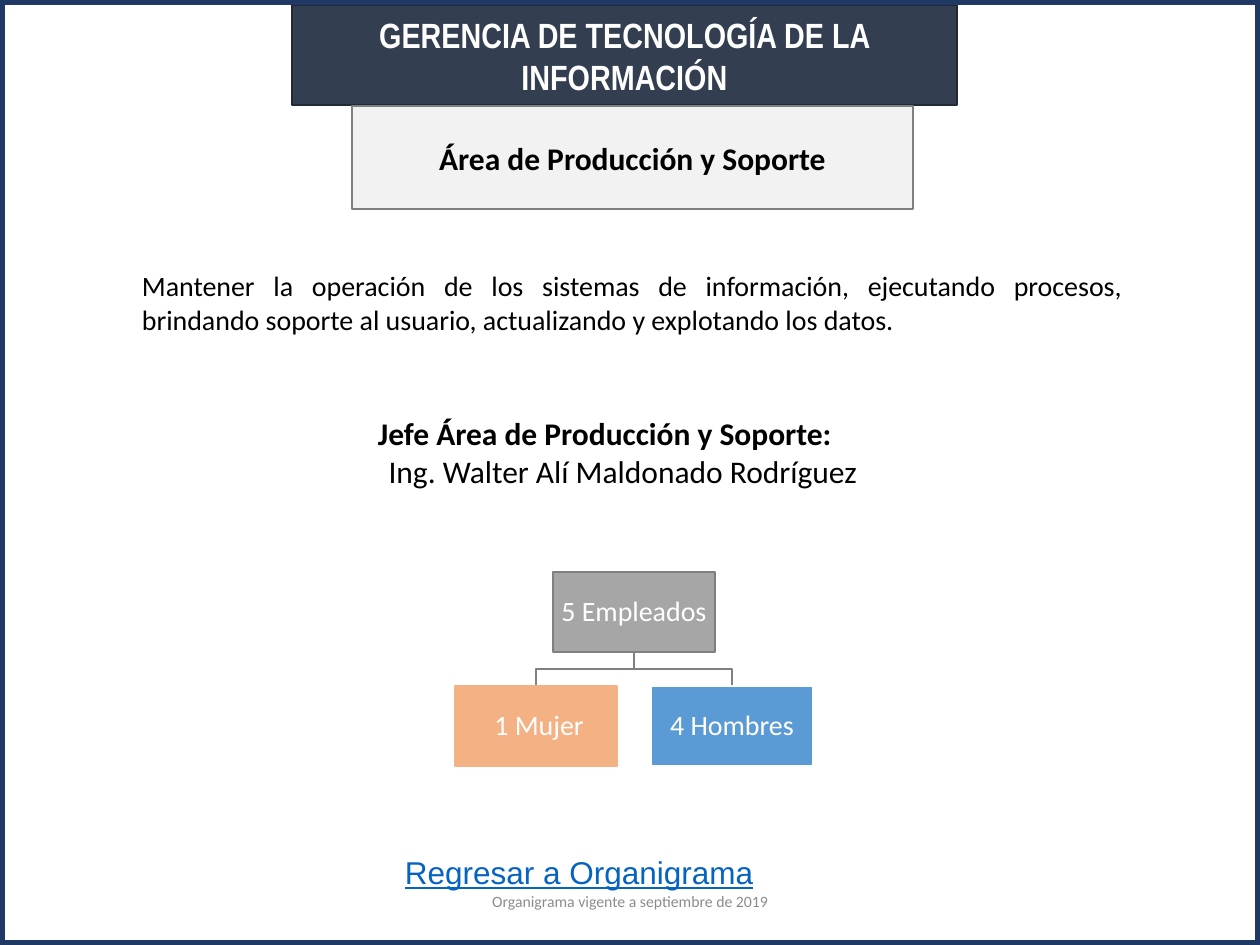
from dataclasses import dataclass

from pptx import Presentation
from pptx.dml.color import RGBColor
from pptx.enum.shapes import MSO_SHAPE
from pptx.enum.text import MSO_ANCHOR, MSO_AUTO_SIZE, PP_ALIGN
from pptx.util import Emu, Pt

RECTANGLE = MSO_SHAPE.RECTANGLE
LEFT, CENTER, JUSTIFY = PP_ALIGN.LEFT, PP_ALIGN.CENTER, PP_ALIGN.JUSTIFY
TOP, MIDDLE = MSO_ANCHOR.TOP, MSO_ANCHOR.MIDDLE
NO_FIT, GROW = MSO_AUTO_SIZE.NONE, MSO_AUTO_SIZE.SHAPE_TO_FIT_TEXT
EMU_PER_PX = 914400 / 126
SLIDE_W, SLIDE_H = 1260, 945
INSETS = (13, 6, 13, 6)


@dataclass(frozen=True)
class Theme:
    body_font: str = "Calibri"
    header_font: str = "Arial Narrow"
    link_font: str = "Arial"
    header_size: int = 20
    heading_size: int = 18
    body_size: int = 16
    footer_size: int = 9
    text: str = "000000"
    light: str = "FFFFFF"
    frame: str = "203864"
    header: str = "333F50"
    header_edge: str = "222A35"
    area: str = "F2F2F2"
    edge: str = "808080"
    total: str = "A6A6A6"
    women: str = "F4B183"
    men: str = "5B9BD5"
    link: str = "0563C1"
    footer: str = "8C8C8C"


def px(length):
    return Emu(round(length * EMU_PER_PX))


def write(paragraph, text, *, font, size, color, bold=False, underline=False,
          align=LEFT, spacing=1.0, indent=0):
    if indent:
        paragraph._p.get_or_add_pPr().set("marL", str(px(indent)))
    paragraph.alignment = align
    paragraph.line_spacing = spacing
    run = paragraph.add_run()
    run.text = text
    run.font.name = font
    run.font.size = Pt(size)
    run.font.bold = bold
    run.font.underline = underline
    run.font.color.rgb = RGBColor.from_string(color)


class SlideBuilder:
    def __init__(self, slide, theme):
        self.slide = slide
        self.theme = theme

    def paint(self, shape, fill, line, width=1):
        shape.shadow.inherit = False
        if fill:
            shape.fill.solid()
            shape.fill.fore_color.rgb = RGBColor.from_string(fill)
        else:
            shape.fill.background()
        shape.line.color.rgb = RGBColor.from_string(line)
        shape.line.width = Pt(width)

    def frame_text(self, shape, anchor, fit=NO_FIT, insets=INSETS):
        frame = shape.text_frame
        frame.word_wrap = True
        frame.auto_size = fit
        frame.vertical_anchor = anchor
        (frame.margin_left, frame.margin_top,
         frame.margin_right, frame.margin_bottom) = map(px, insets)
        return frame

    def title(self, text, bounds, fill, line, **style):
        title = self.slide.shapes.title
        title.left, title.top, title.width, title.height = map(px, bounds)
        self.paint(title, fill, line)
        write(self.frame_text(title, MIDDLE).paragraphs[0], text, **style)

    def box(self, bounds, fill, line, width=1, text=None, insets=INSETS, **style):
        box = self.slide.shapes.add_shape(RECTANGLE, *map(px, bounds))
        self.paint(box, fill, line, width)
        if text:
            frame = self.frame_text(box, MIDDLE, insets=insets)
            write(frame.paragraphs[0], text, **style)

    def text(self, bounds, lines, anchor=TOP, fit=GROW, insets=INSETS, **style):
        area = self.slide.shapes.add_textbox(*map(px, bounds))
        frame = self.frame_text(area, anchor, fit, insets)
        for index, (content, changes) in enumerate(lines):
            paragraph = frame.add_paragraph() if index else frame.paragraphs[0]
            write(paragraph, content, **{**style, **changes})

    def branch(self, start, end):
        (x1, y1), (x2, y2) = start, end
        middle = (y1 + y2) // 2
        outline = self.slide.shapes.build_freeform(x1, y1, scale=EMU_PER_PX)
        outline.add_line_segments([(x1, middle), (x2, middle), (x2, y2)], close=False)
        self.paint(outline.convert_to_shape(), None, self.theme.edge)

    def staff_chart(self, total, groups, center, top, node_w, node_h, gap_x, gap_y):
        theme = self.theme
        style = dict(font=theme.body_font, size=theme.body_size, color=theme.light,
                     align=CENTER, spacing=0.9, insets=(1, 1, 1, 1))
        group_top = top + node_h + gap_y
        step = node_w + gap_x
        centers = [center + round((i - (len(groups) - 1) / 2) * step)
                   for i in range(len(groups))]
        for group_center in centers:
            self.branch((center, top + node_h), (group_center, group_top))
        nodes = [(center, top, *total)]
        nodes += [(x, group_top, *group) for x, group in zip(centers, groups)]
        for x, y, label, fill, line in nodes:
            self.box((x - node_w // 2, y, node_w, node_h), fill, line, text=label, **style)


def main():
    deck = Presentation()
    deck.slide_width, deck.slide_height = px(SLIDE_W), px(SLIDE_H)
    theme = Theme()
    page = SlideBuilder(deck.slides.add_slide(deck.slide_layouts[5]), theme)
    heading = dict(font=theme.body_font, size=theme.heading_size,
                   color=theme.text, bold=True, align=CENTER)

    page.box((0, 0, SLIDE_W, SLIDE_H), None, theme.frame, 6)
    page.text((392, 847, 412, 50), [("Regresar a Organigrama", {})],
              font=theme.link_font, size=theme.heading_size,
              color=theme.link, underline=True)
    page.title("GERENCIA DE TECNOLOGÍA DE LA INFORMACIÓN", (292, 5, 665, 100),
               theme.header, theme.header_edge, font=theme.header_font,
               size=theme.header_size, color=theme.light, bold=True, align=CENTER)
    page.text((317, 408, 620, 89),
              [("Jefe Área de Producción y Soporte:", {}),
               ("Ing. Walter Alí Maldonado Rodríguez", {"bold": False, "indent": 36})],
              insets=(13, 6, 57, 6), **heading)
    page.box((352, 106, 561, 103), theme.area, theme.edge,
             text="Área de Producción y Soporte", **heading)
    page.staff_chart(("5 Empleados", theme.total, theme.edge),
                     [(" 1 Mujer", theme.women, theme.women),
                      ("4 Hombres", theme.men, theme.light)],
                     center=634, top=572, node_w=162, node_h=80, gap_x=33, gap_y=34)
    page.text((129, 263, 1007, 81),
              [("Mantener la operación de los sistemas de información, ejecutando "
                "procesos, brindando soporte al usuario, actualizando y explotando "
                "los datos.", {})],
              font=theme.body_font, size=theme.body_size, color=theme.text, align=JUSTIFY)
    page.text((417, 876, 426, 50), [("Organigrama vigente a septiembre de 2019", {})],
              anchor=MIDDLE, fit=NO_FIT, font=theme.body_font,
              size=theme.footer_size, color=theme.footer, align=CENTER)

    deck.save("out.pptx")


if __name__ == "__main__":
    main()
